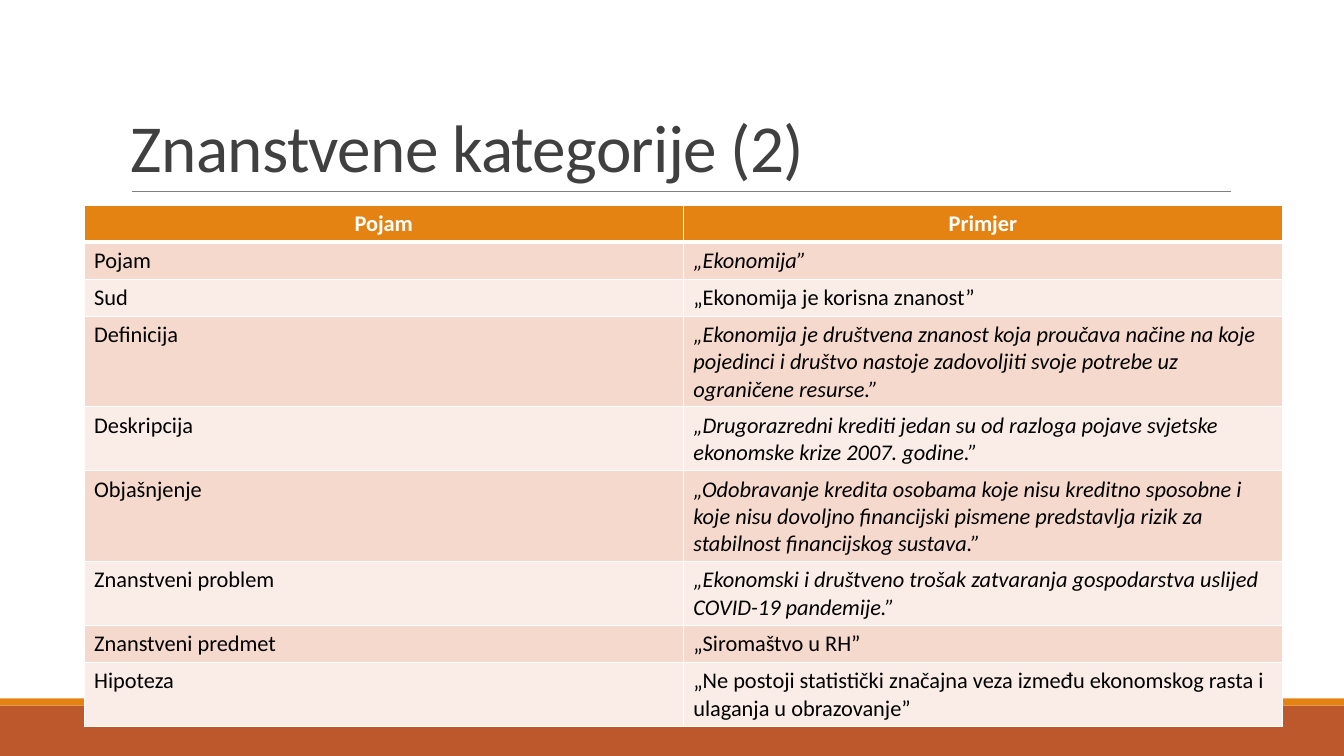
from lxml.etree import SubElement
from pptx import Presentation
from pptx.dml.color import RGBColor
from pptx.enum.shapes import MSO_CONNECTOR as Connector, MSO_SHAPE as Shape
from pptx.enum.text import MSO_ANCHOR as Anchor, PP_ALIGN as Align
from pptx.oxml import parse_xml
from pptx.oxml.ns import nsdecls, qn
from pptx.util import Cm, Pt

HEADINGS = ("Pojam", "Primjer")
CATEGORIES = [
    ("Pojam", "„Ekonomija”", 1, True),
    ("Sud", "„Ekonomija je korisna znanost”", 1, False),
    ("Definicija", "„Ekonomija je društvena znanost koja proučava načine na koje "
     "pojedinci i društvo nastoje zadovoljiti svoje potrebe uz ograničene resurse.”", 3, True),
    ("Deskripcija", "„Drugorazredni krediti jedan su od razloga pojave svjetske "
     "ekonomske krize 2007. godine.”", 2, True),
    ("Objašnjenje", "„Odobravanje kredita osobama koje nisu kreditno sposobne i koje nisu "
     "dovoljno financijski pismene predstavlja rizik za stabilnost financijskog sustava.”", 3, True),
    ("Znanstveni problem", "„Ekonomski i društveno trošak zatvaranja gospodarstva uslijed "
     "COVID-19 pandemije.”", 2, True),
    ("Znanstveni predmet", "„Siromaštvo u RH”", 1, False),
    ("Hipoteza", "„Ne postoji statistički značajna veza između ekonomskog rasta i "
     "ulaganja u obrazovanje”", 2, False),
]


def color(value):
    return RGBColor.from_string(value)


class CategorySlide:
    """Holds the style and the current slide, and adds its elements."""

    font = "Calibri"
    orange, rust, white = "E48312", "BD582C", "FFFFFF"
    bands = ("F5D9CC", "FAEDE7")
    first_line, next_line = 0.86, 0.64

    def __init__(self, deck):
        self.slide = deck.slides.add_slide(deck.slide_layouts[6])
        self.shapes = self.slide.shapes

    def text_run(self, paragraph, text, size, ink, bold=False, italic=False):
        run = paragraph.add_run()
        run.text = text
        run.font.name, run.font.size = self.font, Pt(size)
        run.font.bold, run.font.italic = bold, italic
        run.font.color.rgb = color(ink)
        return run

    def band(self, top, height, fill):
        strip = self.shapes.add_shape(Shape.RECTANGLE, 0, Cm(top), Cm(33.87), Cm(height))
        strip.shadow.inherit = False
        strip.fill.solid()
        strip.fill.fore_color.rgb = color(fill)
        strip.line.fill.background()

    def rule(self, left, right, y):
        divider = self.shapes.add_connector(Connector.STRAIGHT, Cm(left), Cm(y), Cm(right), Cm(y))
        divider.line.color.rgb = color("808080")
        divider.line.width = Pt(0.5)
        SubElement(divider._element.spPr, qn("a:effectLst"))

    def title(self, text, left, top, width, height):
        frame = self.shapes.add_textbox(Cm(left), Cm(top), Cm(width), Cm(height)).text_frame
        frame.word_wrap = True
        frame.vertical_anchor = Anchor.BOTTOM
        heading = frame.paragraphs[0]
        heading.line_spacing = 0.85
        run = self.text_run(heading, text, 48, "404040")
        run.font._element.set("spc", "-50")

    def cell(self, cell, text, fill, ink, heading=False, italic=False):
        cell.fill.solid()
        cell.fill.fore_color.rgb = color(fill)
        paragraph = cell.text_frame.paragraphs[0]
        paragraph.alignment = Align.CENTER if heading else Align.LEFT
        self.text_run(paragraph, text, 16, ink, heading, italic)

    def borders(self, cell, top, bottom):
        properties = cell._tc.get_or_add_tcPr()
        for place, (side, width) in enumerate(zip("LRTB", (1, 1, top, bottom))):
            properties.insert(place, parse_xml(
                f'<a:ln{side} {nsdecls("a")} w="{Pt(width)}"><a:solidFill>'
                f'<a:srgbClr val="{self.white}"/></a:solidFill></a:ln{side}>'))

    def table(self, left, top, width):
        line_counts = [1] + [lines for _, _, lines, _ in CATEGORIES]
        heights = [self.first_line + self.next_line * (lines - 1) for lines in line_counts]
        frame = self.shapes.add_table(len(heights), len(HEADINGS), Cm(left), Cm(top),
                                      Cm(width), Cm(sum(heights)))
        grid = frame.table
        for row, height in zip(grid.rows, heights):
            row.height = Cm(height)
        for column, heading in enumerate(HEADINGS):
            self.cell(grid.cell(0, column), heading, self.orange, self.white, heading=True)
            self.borders(grid.cell(0, column), 1, 3)
        for index, (term, example, _, italic) in enumerate(CATEGORIES):
            row, fill = index + 1, self.bands[index % 2]
            self.cell(grid.cell(row, 0), term, fill, "000000")
            self.cell(grid.cell(row, 1), example, fill, "000000", italic=italic)
            for column in range(len(HEADINGS)):
                self.borders(grid.cell(row, column), 3 if row == 1 else 1, 1)


def main():
    deck = Presentation()
    deck.slide_width, deck.slide_height = Cm(33.87), Cm(19.05)
    page = CategorySlide(deck)
    page.band(17.78, 1.27, page.rust)
    page.band(17.6, 0.18, page.orange)
    page.rule(3.32, 31.01, 4.82)
    page.title("Znanstvene kategorije (2)", 3.05, 0.8, 27.94, 4.03)
    page.table(2.12, 5.17, 30.2)
    deck.save("out.pptx")


if __name__ == "__main__":
    main()
